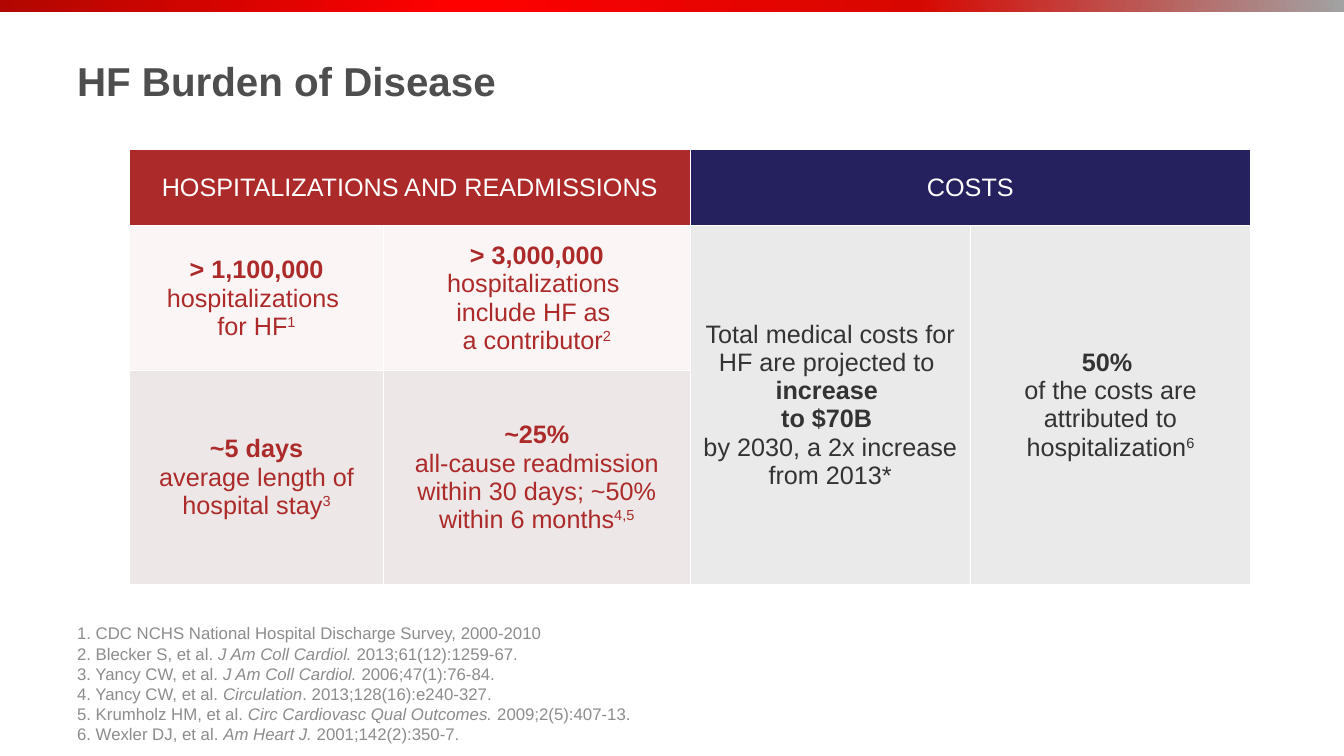
from lxml import etree
from pptx import Presentation
from pptx.dml.color import RGBColor
from pptx.enum.shapes import MSO_SHAPE
from pptx.enum.text import MSO_ANCHOR, PP_ALIGN
from pptx.oxml.ns import qn
from pptx.util import Pt

RECTANGLE = MSO_SHAPE.RECTANGLE
MIDDLE, BOTTOM = MSO_ANCHOR.MIDDLE, MSO_ANCHOR.BOTTOM
LEFT, CENTER = PP_ALIGN.LEFT, PP_ALIGN.CENTER

COLORS = {
    "title": "4D4E4D", "reference": "8C8C8C", "white": "FFFFFF",
    "red": "AC2A29", "navy": "25215E", "dark": "333333",
    "pink": "F4CFCF", "maroon": "561514",
}
BAND_STOPS = [(0, "B10700"), (14, "D00400"), (34, "FF0000"), (68, "D70700"), (100, "A2A2A2")]

TITLE = [[("HF Burden of Disease", "b")]]
REFERENCES = [
    ("1. CDC NCHS National Hospital Discharge Survey, 2000-2010", "", ""),
    ("2. Blecker S, et al. ", "J Am Coll Cardiol. ", "2013;61(12):1259-67."),
    ("3. Yancy CW, et al. ", "J Am Coll Cardiol. ", "2006;47(1):76-84."),
    ("4. Yancy CW, et al. ", "Circulation", ". 2013;128(16):e240-327."),
    ("5. Krumholz HM, et al. ", "Circ Cardiovasc Qual Outcomes. ", "2009;2(5):407-13."),
    ("6. Wexler DJ, et al. ", "Am Heart J. ", "2001;142(2):350-7."),
]

COLUMN_WIDTHS = [181.5, 219, 200.2, 200.2]
ROW_HEIGHTS = [54.5, 103.5, 152.5]
CELLS = [
    {"at": (0, 0), "end": (0, 1), "fill": "red", "color": "white",
     "text": [[("HOSPITALIZATIONS AND READMISSIONS", "")]]},
    {"at": (0, 2), "end": (0, 3), "fill": "navy", "color": "white",
     "text": [[("COSTS", "")]]},
    {"at": (1, 0), "fill": "pink", "alpha": 20, "color": "red",
     "text": [[("> 1,100,000", "b")], [("hospitalizations \nfor HF", ""), ("1", "s")]]},
    {"at": (1, 1), "fill": "pink", "alpha": 20, "color": "red",
     "text": [[("> 3,000,000", "b")],
              [("hospitalizations \ninclude HF as \na contributor", ""), ("2", "s")]]},
    {"at": (1, 2), "end": (2, 2), "fill": "dark", "alpha": 10, "color": "dark",
     "text": [[("Total medical costs for HF are projected to \n", ""),
               ("increase \nto $70B \n", "b"),
               ("by 2030, a 2x increase from 2013*", "")]]},
    {"at": (1, 3), "end": (2, 3), "fill": "dark", "alpha": 10, "color": "dark",
     "text": [[("50% ", "b")],
              [("of the costs are attributed to hospitalization", ""), ("6", "s")]]},
    {"at": (2, 0), "fill": "maroon", "alpha": 10, "color": "red",
     "text": [[("~5 days", "b")], [("average length of hospital stay", ""), ("3", "s")]]},
    {"at": (2, 1), "fill": "maroon", "alpha": 10, "color": "red",
     "text": [[("~25%", "b")],
              [("all-cause readmission within 30 days; ~50% within 6 months", ""), ("4,5", "s")]]},
]


def write(frame, paragraphs, size, color, align=LEFT, anchor=MIDDLE):
    frame.word_wrap = True
    frame.vertical_anchor = anchor
    for index, spans in enumerate(paragraphs):
        para = frame.paragraphs[0] if index == 0 else frame.add_paragraph()
        para.alignment = align
        for text, style in spans:
            for number, line in enumerate(text.split("\n")):
                if number:
                    para.add_line_break()
                if not line:
                    continue
                span = para.add_run()
                span.text = line
                span.font.name = "Arial"
                span.font.size = Pt(size)
                span.font.bold = style == "b"
                span.font.italic = style == "i"
                span.font.color.rgb = RGBColor.from_string(COLORS[color])
                if style == "s":
                    span.font._element.set("baseline", "30000")


def add_text(page, left, top, width, height, paragraphs, **style):
    box = page.shapes.add_textbox(Pt(left), Pt(top), Pt(width), Pt(height))
    write(box.text_frame, paragraphs, **style)


def add_band(page):
    band = page.shapes.add_shape(RECTANGLE, 0, 0, Pt(960), Pt(8.6))
    band.shadow.inherit = False
    band.line.fill.background()
    band.fill.gradient()
    band.fill.gradient_angle = 0
    stops = band._element.spPr.find(qn("a:gradFill")).find(qn("a:gsLst"))
    for stop in list(stops):
        stops.remove(stop)
    for position, color in BAND_STOPS:
        stop = etree.SubElement(stops, qn("a:gs"), pos=str(position * 1000))
        etree.SubElement(stop, qn("a:srgbClr"), val=color)


def add_burden_table(page):
    frame = page.shapes.add_table(len(ROW_HEIGHTS), len(COLUMN_WIDTHS), Pt(92.5), Pt(106.8),
                                  Pt(sum(COLUMN_WIDTHS)), Pt(sum(ROW_HEIGHTS)))
    table = frame.table
    table.horz_banding = False
    for column, width in zip(table.columns, COLUMN_WIDTHS):
        column.width = Pt(width)
    for row, height in zip(table.rows, ROW_HEIGHTS):
        row.height = Pt(height)
    for entry in CELLS:
        cell = table.cell(*entry["at"])
        if "end" in entry:
            cell.merge(table.cell(*entry["end"]))
        cell.margin_left = cell.margin_right = Pt(7.9)
        cell.margin_top = cell.margin_bottom = Pt(2.9)
        cell.vertical_anchor = MIDDLE
        cell.fill.solid()
        cell.fill.fore_color.rgb = RGBColor.from_string(COLORS[entry["fill"]])
        if "alpha" in entry:
            tint = cell._tc.tcPr.find(qn("a:solidFill"))[0]
            etree.SubElement(tint, qn("a:alpha"), val=str(entry["alpha"] * 1000))
        write(cell.text_frame, entry["text"], 18, entry["color"], align=CENTER)
        cell.text_frame.word_wrap = None


def main():
    deck = Presentation()
    deck.slide_width, deck.slide_height = Pt(960), Pt(540)
    page = deck.slides.add_slide(deck.slide_layouts[6])
    add_band(page)
    add_text(page, 48, 5, 846, 104.4, TITLE, size=28.8, color="title")
    references = [list(zip(parts, ("", "i", ""))) for parts in REFERENCES]
    add_text(page, 48, 445, 710, 90, references, size=12, color="reference", anchor=BOTTOM)
    add_burden_table(page)
    deck.save("out.pptx")


if __name__ == "__main__":
    main()
